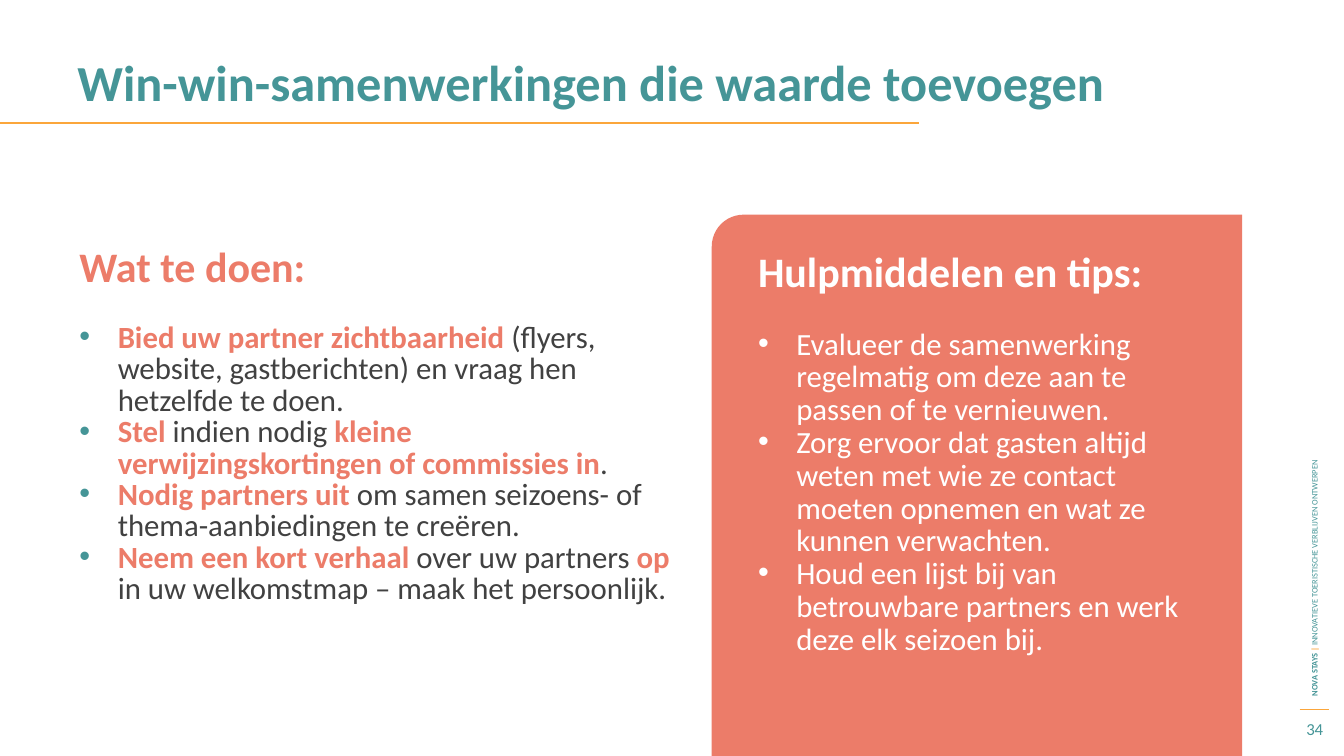
from lxml.etree import SubElement
from pptx import Presentation
from pptx.dml.color import RGBColor
from pptx.enum.shapes import MSO_CONNECTOR, MSO_SHAPE
from pptx.enum.text import MSO_ANCHOR, MSO_AUTO_SIZE, PP_ALIGN
from pptx.oxml.ns import qn
from pptx.util import Inches, Pt

TEAL = RGBColor(0x45, 0x95, 0x97)
ORANGE = RGBColor(0xFB, 0xA6, 0x3B)
CORAL = RGBColor(0xEC, 0x7C, 0x69)
GREY = RGBColor(0x41, 0x41, 0x41)
WHITE = RGBColor(0xFF, 0xFF, 0xFF)


def add_text(frame, runs, size, spacing=None, before=None, bullet=None, align=PP_ALIGN.LEFT):
    """Add a paragraph of (text, colour, bold) runs; bullet is the bullet's colour."""
    first = frame.paragraphs[0]
    paragraph = frame.add_paragraph() if first.runs else first
    paragraph.alignment = align
    if spacing:
        paragraph.line_spacing = Pt(spacing)
    if before:
        paragraph.space_before = Pt(before)
    if bullet is not None:
        properties = paragraph._p.get_or_add_pPr()
        properties.set("marL", str(Inches(0.38)))
        properties.set("indent", str(-Inches(0.38)))
        bullet_color = SubElement(properties, qn("a:buClr"))
        SubElement(bullet_color, qn("a:srgbClr"), val=str(bullet))
        SubElement(properties, qn("a:buFont"), typeface="Arial")
        SubElement(properties, qn("a:buChar"), char="•")
    for text, color, bold in runs:
        run = paragraph.add_run()
        run.text = text
        run.font.name = "Calibri"
        run.font.size = Pt(size)
        run.font.bold = bold
        run.font.color.rgb = color


def add_frame(left, top, width, height, anchor=MSO_ANCHOR.TOP, rotation=0):
    """Add a wrapping text box and return its text frame."""
    box = slide.shapes.add_textbox(Inches(left), Inches(top), Inches(width), Inches(height))
    box.rotation = rotation
    frame = box.text_frame
    frame.word_wrap = True
    frame.auto_size = MSO_AUTO_SIZE.NONE
    frame.vertical_anchor = anchor
    return frame


presentation = Presentation()
presentation.slide_width = Inches(13.33)
presentation.slide_height = Inches(7.5)
slide = presentation.slides.add_slide(presentation.slide_layouts[6])

# Rules under the title and above the page number
for start, end, y, weight in [(12.89, 13.18, 7.04, 0.75), (0, 9.11, 1.22, 1.5)]:
    rule = slide.shapes.add_connector(
        MSO_CONNECTOR.STRAIGHT, Inches(start), Inches(y), Inches(end), Inches(y))
    rule.line.color.rgb = ORANGE
    rule.line.width = Pt(weight)
    SubElement(rule._element.spPr, qn("a:effectLst"))

# Side label and page number
side_label = add_frame(10.15, 4.02, 5.77, 0.2, MSO_ANCHOR.MIDDLE, rotation=270)
add_text(side_label, [
    ("NOVA STAYS ", TEAL, True),
    ("| ", ORANGE, True),
    ("INNOVATIEVE TOERISTISCHE VERBLIJVEN ONTWERPEN", TEAL, False),
], size=6)
page_number = add_frame(12.78, 7.06, 0.52, 0.34, MSO_ANCHOR.MIDDLE)
add_text(page_number, [("34", TEAL, False)], size=12, align=PP_ALIGN.CENTER)

# Title
title = add_frame(0.67, 0.54, 12, 0.88)
add_text(title, [("Win-win-samenwerkingen die waarde toevoegen", TEAL, True)], size=36, spacing=37.2)

# Left column: actions
actions_heading = add_frame(0.69, 2.43, 6.14, 0.88)
add_text(actions_heading, [("Wat te doen:", CORAL, True)], size=30, spacing=29)

actions = [
    [("Bied uw partner zichtbaarheid ", CORAL, True),
     ("(flyers, website, gastberichten) en vraag hen hetzelfde te doen.", GREY, False)],
    [("Stel ", CORAL, True),
     ("indien nodig ", GREY, False),
     ("kleine verwijzingskortingen of commissies in", CORAL, True),
     (".", GREY, False)],
    [("Nodig partners uit ", CORAL, True),
     ("om samen seizoens- of thema-aanbiedingen te creëren.", GREY, False)],
    [("Neem een kort verhaal ", CORAL, True),
     ("over uw partners ", GREY, False),
     ("op ", CORAL, True),
     ("in uw welkomstmap – maak het persoonlijk.", GREY, False)],
]
actions_frame = add_frame(0.69, 3.16, 6.14, 4)
for action in actions:
    add_text(actions_frame, action, size=22, spacing=22.4, bullet=TEAL)

# Right panel, mirrored so that the round corner is at the top left
panel = slide.shapes.add_shape(
    MSO_SHAPE.ROUND_1_RECTANGLE,
    Inches(7.06), Inches(2.13), Inches(5.26), Inches(5.37))
panel.adjustments[0] = 0.06
panel._element.spPr.xfrm.set("flipH", "1")
panel.shadow.inherit = False
panel.fill.solid()
panel.fill.fore_color.rgb = CORAL
panel.line.fill.background()

tips = [
    "Evalueer de samenwerking regelmatig om deze aan te passen of te vernieuwen.",
    "Zorg ervoor dat gasten altijd weten met wie ze contact moeten opnemen en wat ze kunnen verwachten.",
    "Houd een lijst bij van betrouwbare partners en werk deze elk seizoen bij.",
]
tips_frame = add_frame(7.42, 2.56, 4.54, 3.59)
add_text(tips_frame, [("Hulpmiddelen en tips:", WHITE, True)], size=30, spacing=23.4)
for index, tip in enumerate(tips):
    add_text(tips_frame, [(tip, WHITE, False)], size=22, spacing=23.4,
             before=23.4 if index == 0 else None, bullet=WHITE)

presentation.save("out.pptx")
